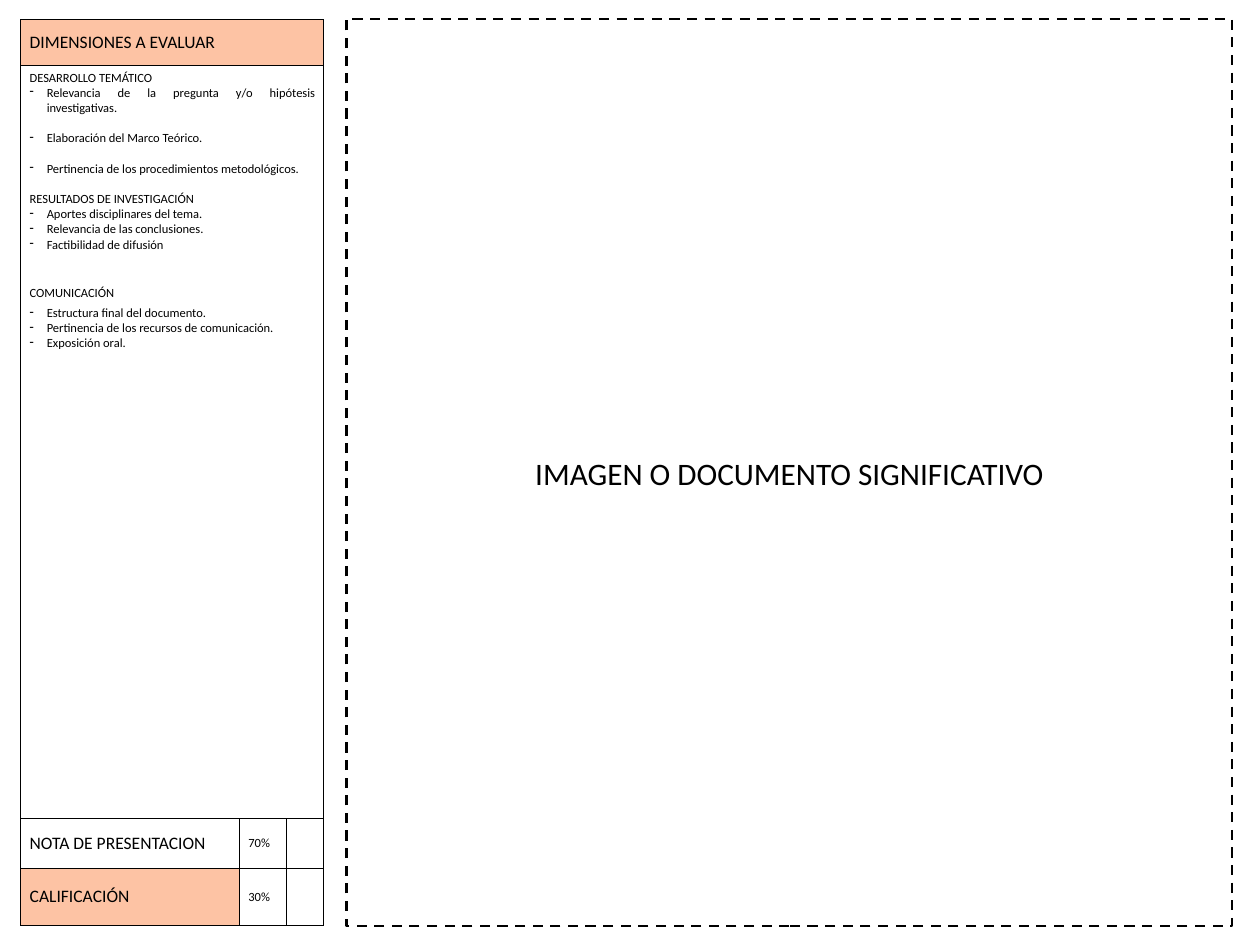
import pptx
import pptx.util
import pptx.dml.color
import pptx.enum.dml
import pptx.enum.shapes
import pptx.enum.text
import pptx.oxml
import pptx.oxml.ns
from lxml import etree

Inches = pptx.util.Inches
Pt = pptx.util.Pt
PP_ALIGN = pptx.enum.text.PP_ALIGN
MSO_ANCHOR = pptx.enum.text.MSO_ANCHOR

COLORS = {"text": "000000", "line": "000000", "accent": "FDC3A4", "white": "FFFFFF"}
FONT = "Calibri"
COLS = [2.43, 0.52, 0.42]
ROWS = [0.51, 8.37, 0.55, 0.63]
GAP = 12.2
HANG = 0.19

# (heading, space before, space before first item, space between items, items)
SECTIONS = [
    ("DESARROLLO TEMÁTICO", 0, 0, GAP, [
        "Relevancia de la pregunta y/o hipótesis investigativas.",
        "Elaboración del Marco Teórico.",
        "Pertinencia de los procedimientos metodológicos."]),
    ("RESULTADOS DE INVESTIGACIÓN", GAP, 0, 0, [
        "Aportes disciplinares del tema.",
        "Relevancia de las conclusiones.",
        "Factibilidad de difusión"]),
    ("COMUNICACIÓN", 26.4, 4, 0, [
        "Estructura final del documento.",
        "Pertinencia de los recursos de comunicación.",
        "Exposición oral."]),
]


def rgb(name):
    return pptx.dml.color.RGBColor.from_string(COLORS[name])


def format_paragraph(p, size, align, before=0):
    p.alignment = align
    p.space_before = Pt(before)
    for r in p.runs:
        r.font.name = FONT
        r.font.size = Pt(size)
        r.font.bold = False
        r.font.color.rgb = rgb("text")


def add_dash(p):
    pPr = p._p.get_or_add_pPr()
    pPr.set("marL", str(Inches(HANG)))
    pPr.set("indent", str(-Inches(HANG)))
    bu = etree.SubElement(pPr, pptx.oxml.ns.qn("a:buChar"))
    bu.set("char", "-")


def set_borders(cell, width):
    tcPr = cell._tc.get_or_add_tcPr()
    for side in ("lnL", "lnR", "lnT", "lnB"):
        tcPr.append(pptx.oxml.parse_xml(
            f'<a:{side} {pptx.oxml.ns.nsdecls("a")} w="{Pt(width)}">'
            f'<a:solidFill><a:srgbClr val="{COLORS["line"]}"/></a:solidFill></a:{side}>'))


def set_fill(cell, color):
    if color:
        cell.fill.solid()
        cell.fill.fore_color.rgb = rgb(color)
    else:
        cell.fill.background()


def set_label(cell, text, size):
    cell.vertical_anchor = MSO_ANCHOR.MIDDLE
    cell.text_frame.text = text
    format_paragraph(cell.text_frame.paragraphs[0], size, PP_ALIGN.JUSTIFY)


def add_criteria(cell):
    lines = []
    for heading, before, first, between, items in SECTIONS:
        lines.append((heading, before, False))
        for i, item in enumerate(items):
            lines.append((item, between if i else first, True))
    tf = cell.text_frame
    tf.text = "\n".join(text for text, _, _ in lines)
    for p, (_, before, dashed) in zip(tf.paragraphs, lines):
        format_paragraph(p, 10, PP_ALIGN.JUSTIFY, before)
        if dashed:
            add_dash(p)


def add_rubric(s):
    frame = s.shapes.add_table(len(ROWS), len(COLS), Inches(0.23), Inches(0.22),
                               Inches(sum(COLS)), Inches(sum(ROWS)))
    table = frame.table
    table.first_row = False
    table.horz_banding = False
    for col, width in zip(table.columns, COLS):
        col.width = Inches(width)
    for row, height in zip(table.rows, ROWS):
        row.height = Inches(height)
    fills = {(0, 0): "accent", (2, 0): "white", (3, 0): "accent"}
    for i in range(len(ROWS)):
        for j in range(len(COLS)):
            set_borders(table.cell(i, j), 1)
            set_fill(table.cell(i, j), fills.get((i, j)))
    for i in (0, 1):
        table.cell(i, 0).merge(table.cell(i, 2))
    set_label(table.cell(0, 0), "DIMENSIONES A EVALUAR", 14)
    add_criteria(table.cell(1, 0))
    grades = [("NOTA DE PRESENTACION", "70%"), ("CALIFICACIÓN", "30%")]
    for i, (label, weight) in enumerate(grades, start=2):
        set_label(table.cell(i, 0), label, 14)
        set_label(table.cell(i, 1), weight, 10)


def add_document_area(s):
    sp = s.shapes.add_shape(pptx.enum.shapes.MSO_SHAPE.RECTANGLE, Inches(3.85),
                            Inches(0.21), Inches(9.84), Inches(10.08))
    sp.shadow.inherit = False
    sp.fill.background()
    sp.line.color.rgb = rgb("line")
    sp.line.width = Pt(2)
    sp.line.dash_style = pptx.enum.dml.MSO_LINE.DASH
    tf = sp.text_frame
    tf.vertical_anchor = MSO_ANCHOR.MIDDLE
    tf.text = "IMAGEN O DOCUMENTO SIGNIFICATIVO"
    format_paragraph(tf.paragraphs[0], 25, PP_ALIGN.CENTER)


def main():
    prs = pptx.Presentation()
    prs.slide_width = Inches(14)
    prs.slide_height = Inches(10.5)
    s = prs.slides.add_slide(prs.slide_layouts[6])
    add_document_area(s)
    add_rubric(s)
    prs.save("out.pptx")


if __name__ == "__main__":
    main()
